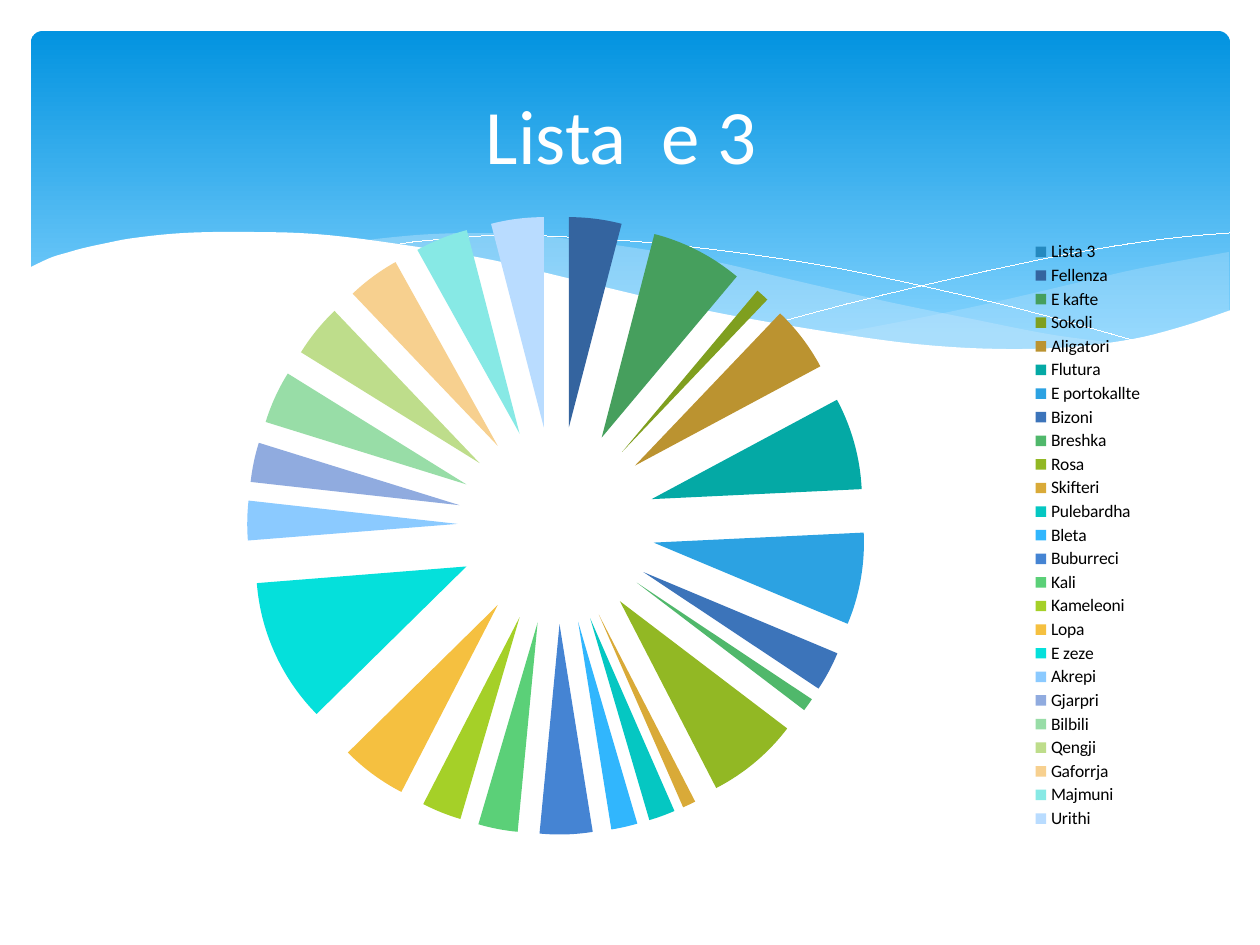
from dataclasses import dataclass

from lxml import etree
from pptx import Presentation
from pptx.chart.data import CategoryChartData
from pptx.dml.color import RGBColor
from pptx.enum.chart import XL_CHART_TYPE, XL_LEGEND_POSITION
from pptx.enum.shapes import MSO_SHAPE
from pptx.enum.text import MSO_ANCHOR, PP_ALIGN
from pptx.oxml.ns import qn
from pptx.util import Pt

ROUND_RECT = MSO_SHAPE.ROUNDED_RECTANGLE
PIE = XL_CHART_TYPE.PIE
LEGEND_RIGHT = XL_LEGEND_POSITION.RIGHT
MIDDLE = MSO_ANCHOR.MIDDLE
CENTER = PP_ALIGN.CENTER

PX = 914400 / 126
FONT = "Calibri"
COLORS = {
    "white": "FFFFFF",
    "black": "000000",
    "sky_top": "0293E0",
    "sky_bottom": "83D3FE",
    "wave": "C6E7FC",
}
EXPLOSION = 47
# Legend box as fractions of the chart
LEGEND_BOX = {"x": 0.865, "y": 0.06, "w": 0.11, "h": 0.91}
CURVE_STEPS = 5
HAIRLINE = 1  # EMU

Point = tuple[float, float]


@dataclass
class Wave:
    """Smooth edges joined end to end; opacity in percent, None for a bare line."""
    edges: list[list[Point]]
    color: str
    opacity: int | None = None


@dataclass
class Slice:
    name: str
    value: int | None
    color: str


WAVES = [
    # Pale wave on the right
    Wave([[(1229, 252), (1142, 268), (1085, 281), (982, 305), (889, 324), (833, 334)],
          [(833, 334), (906, 344), (969, 348), (1026, 350), (1076, 348), (1120, 343),
           (1160, 334), (1196, 324), (1229, 311)]], "wave", 29),
    # Long pale wave
    Wave([[(360, 241), (394, 237), (433, 234), (479, 233), (529, 235), (586, 241),
           (648, 250), (717, 262), (793, 280), (889, 302), (977, 320), (1054, 335),
           (1125, 344)],
          [(1125, 344), (1068, 349), (1003, 350), (926, 347), (838, 338), (735, 321),
           (619, 292), (566, 280), (509, 266), (456, 256), (407, 247), (360, 241)]],
         "wave", 40),
    # Thin crest lines
    Wave([[(389, 246), (413, 242), (457, 238), (505, 235), (567, 237), (642, 242),
           (733, 252), (837, 268), (958, 294), (1047, 316), (1143, 343)]], "white"),
    Wave([[(772, 324), (847, 304), (942, 281), (1053, 257), (1128, 244), (1182, 237),
           (1229, 233)]], "white"),
    # White front wave
    Wave([[(1231, 310), (1184, 326), (1133, 339), (1071, 347), (999, 349), (915, 344),
           (816, 330), (699, 309), (563, 277), (492, 260), (398, 244), (315, 234),
           (243, 232), (184, 233), (134, 238), (107, 243), (84, 248), (66, 253),
           (50, 258), (29, 268)],
          [(29, 415), (1231, 415)]], "white", 100),
]

SLICES = [
    Slice("Lista 3", None, "2589BF"), Slice("Fellenza", 4, "34649F"),
    Slice("E kafte", 7, "469F5D"), Slice("Sokoli", 1, "7F9F1F"),
    Slice("Aligatori", 5, "BB9330"), Slice("Flutura", 7, "04A9A5"),
    Slice("E portokallte", 7, "2CA2E2"), Slice("Bizoni", 3, "3C74BA"),
    Slice("Breshka", 1, "50B86B"), Slice("Rosa", 7, "92B824"),
    Slice("Skifteri", 1, "D9AA38"), Slice("Pulebardha", 2, "05C7C2"),
    Slice("Bleta", 2, "31B6FD"), Slice("Buburreci", 4, "4584D3"),
    Slice("Kali", 3, "5BD078"), Slice("Kameleoni", 3, "A5D028"),
    Slice("Lopa", 5, "F5C040"), Slice("E zeze", 11, "05E0DB"),
    Slice("Akrepi", 3, "8BCAFF"), Slice("Gjarpri", 3, "90ABDF"),
    Slice("Bilbili", 4, "98DDA7"), Slice("Qengji", 4, "BEDD8B"),
    Slice("Gaforrja", 4, "F7D08F"), Slice("Majmuni", 4, "87E9E5"),
    Slice("Urithi", 4, "B9DCFF"),
]


def px(n: float) -> int:
    return round(n * PX)


def rgb(name: str) -> RGBColor:
    return RGBColor.from_string(COLORS[name])


def smooth(knots: list[Point]) -> list[Point]:
    """Points on a Catmull-Rom curve through the knots."""
    ends = [knots[0], *knots, knots[-1]]
    points = [knots[0]]
    for a, b, c, d in zip(ends, ends[1:], ends[2:], ends[3:]):
        for step in range(1, CURVE_STEPS + 1):
            t = step / CURVE_STEPS
            points.append(tuple(
                (2 * q + (s - p) * t + (2 * p - 5 * q + 4 * s - u) * t ** 2
                 + (3 * q - p - 3 * s + u) * t ** 3) / 2
                for p, q, s, u in zip(a, b, c, d)))
    return points


def draw_wave(shapes, wave: Wave) -> None:
    points = [(px(x), px(y)) for edge in wave.edges for x, y in smooth(edge)]
    filled = wave.opacity is not None
    builder = shapes.build_freeform(*points[0], scale=1.0)
    builder.add_line_segments(points[1:], close=filled)
    sp = builder.convert_to_shape()
    sp.shadow.inherit = False
    if not filled:
        sp.fill.background()
        sp.line.color.rgb = rgb(wave.color)
        sp.line.width = HAIRLINE
        return
    sp.line.fill.background()
    sp.fill.solid()
    sp.fill.fore_color.rgb = rgb(wave.color)
    if wave.opacity < 100:
        clr = sp.fill._xPr.find(".//" + qn("a:srgbClr"))
        etree.SubElement(clr, qn("a:alpha"), val=str(wave.opacity * 1000))


def draw_sky(shapes) -> None:
    sp = shapes.add_shape(ROUND_RECT, px(31), px(31), px(1199), px(340))
    sp.adjustments[0] = 0.034
    sp.shadow.inherit = False
    sp.line.fill.background()
    sp.fill.gradient()
    sp.fill.gradient_angle = 270
    stops = zip(sp.fill.gradient_stops, ("sky_top", "sky_bottom"), (0, 0.9))
    for stop, color, position in stops:
        stop.color.rgb = rgb(color)
        stop.position = position


def draw_title(shapes, text: str) -> None:
    tf = shapes.add_textbox(px(63), px(47), px(1134), px(173)).text_frame
    tf.word_wrap = True
    tf.vertical_anchor = MIDDLE
    p = tf.paragraphs[0]
    p.text = text
    p.alignment = CENTER
    r = p.runs[0]
    r.font.size = Pt(44)
    r.font.name = FONT
    r.font.color.rgb = rgb("white")


def place_legend(legend, box: dict[str, float]) -> None:
    legend.position = LEGEND_RIGHT
    legend.include_in_layout = False
    element = legend._element
    for old in element.findall(qn("c:layout")):
        element.remove(old)
    layout = etree.Element(qn("c:layout"))
    manual = etree.SubElement(layout, qn("c:manualLayout"))
    for mode in ("xMode", "yMode"):
        etree.SubElement(manual, qn(f"c:{mode}"), val="edge")
    for side, fraction in box.items():
        etree.SubElement(manual, qn(f"c:{side}"), val=str(fraction))
    element.find(qn("c:legendPos")).addnext(layout)


def draw_pie(shapes, slices: list[Slice]) -> None:
    data = CategoryChartData()
    data.categories = [s.name for s in slices]
    data.add_series("Series 1", [s.value for s in slices])
    chart = shapes.add_chart(PIE, px(62), px(199), px(1115), px(653), data).chart
    chart.has_title = False
    chart.font.size = Pt(10)
    chart.font.name = FONT
    chart.font.color.rgb = rgb("black")
    chart.has_legend = True
    place_legend(chart.legend, LEGEND_BOX)
    chart.plots[0].vary_by_categories = True

    # Pull all slices apart, then colour them
    series = chart.plots[0].series[0]
    explosion = etree.Element(qn("c:explosion"), val=str(EXPLOSION))
    series._element.find(qn("c:tx")).addnext(explosion)
    for i, item in enumerate(slices):
        fill = series.points[i].format.fill
        fill.solid()
        fill.fore_color.rgb = RGBColor.from_string(item.color)


def main() -> None:
    prs = Presentation()
    prs.slide_width, prs.slide_height = px(1260), px(945)
    shapes = prs.slides.add_slide(prs.slide_layouts[6]).shapes
    draw_sky(shapes)
    for wave in WAVES:
        draw_wave(shapes, wave)
    draw_title(shapes, "Lista  e 3 ")
    draw_pie(shapes, SLICES)
    prs.save("out.pptx")


if __name__ == "__main__":
    main()
